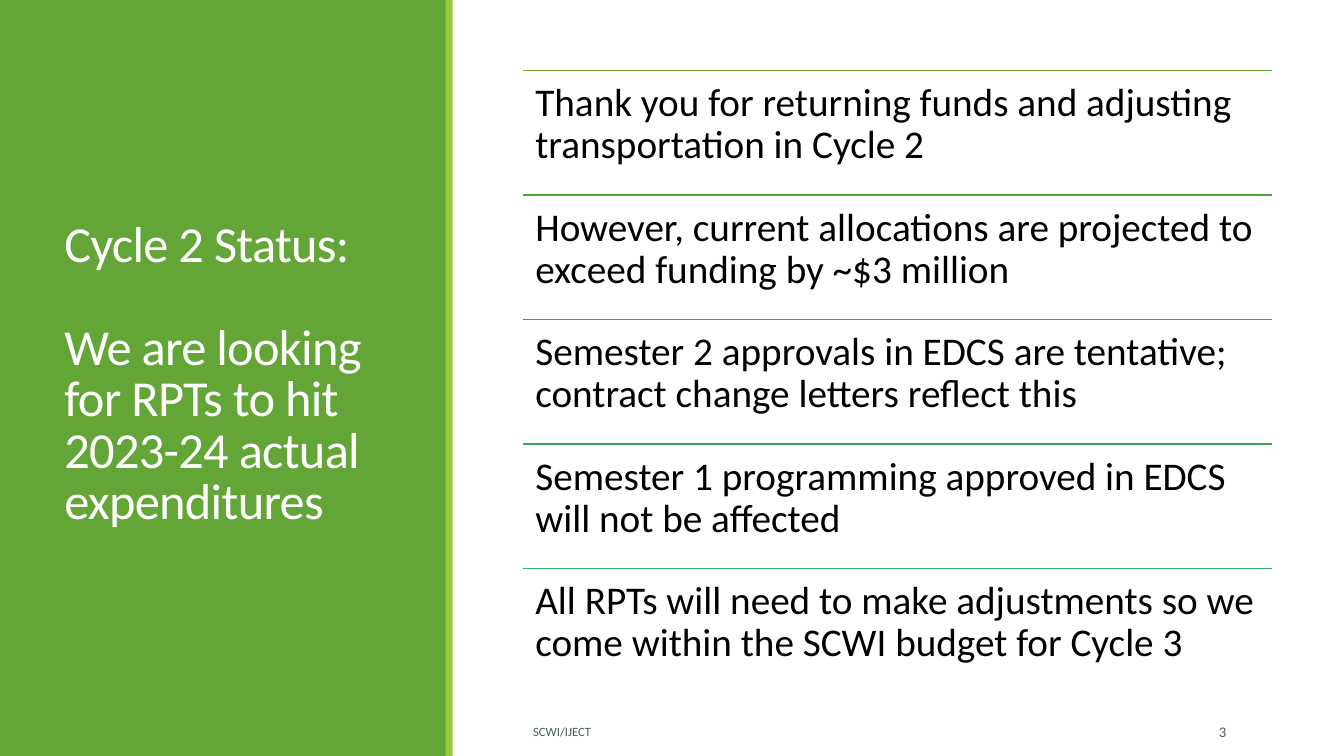
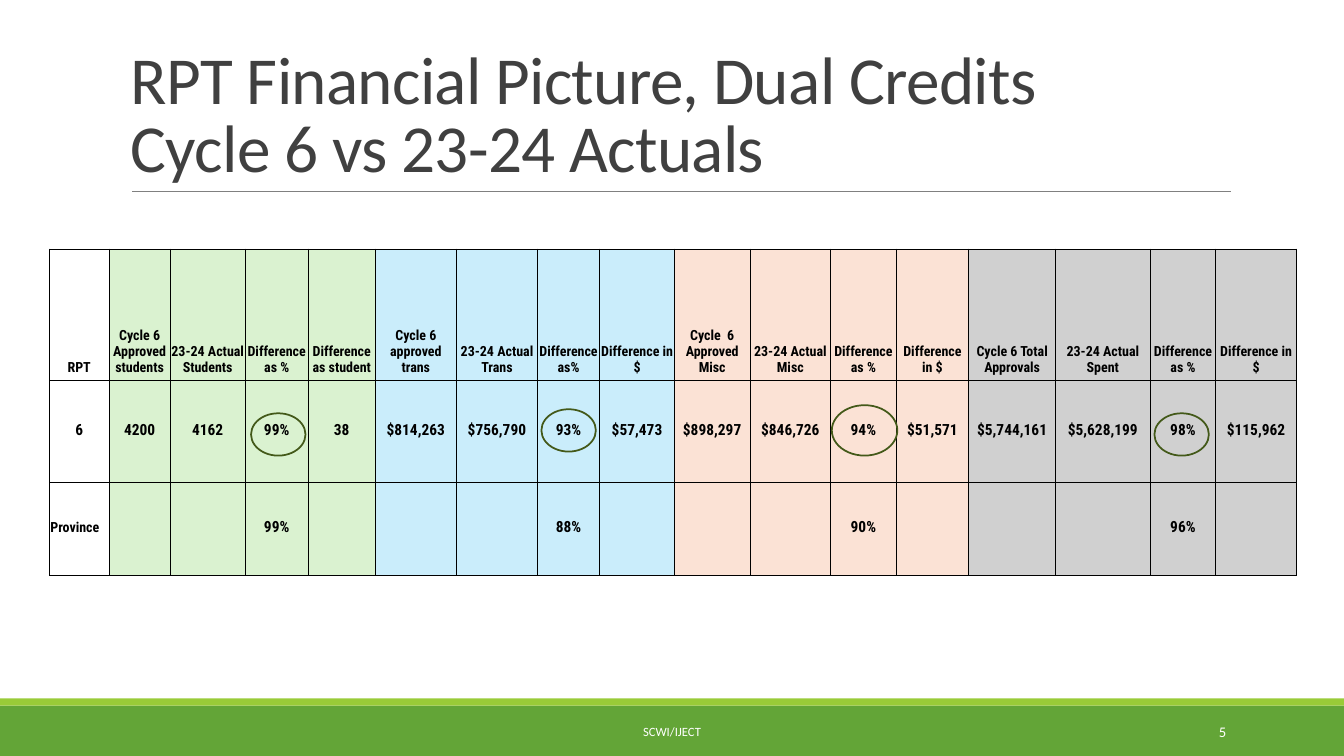
"""Build two slides on the SCWI dual credit funding status."""
from lxml import etree
from pptx import Presentation
from pptx.dml.color import RGBColor
from pptx.enum.shapes import MSO_CONNECTOR, MSO_SHAPE
from pptx.enum.text import MSO_ANCHOR, PP_ALIGN
from pptx.oxml.ns import qn
from pptx.util import Inches, Pt

LEFT, CENTER, RIGHT = PP_ALIGN.LEFT, PP_ALIGN.CENTER, PP_ALIGN.RIGHT
MIDDLE, BOTTOM = MSO_ANCHOR.MIDDLE, MSO_ANCHOR.BOTTOM
TOP = MSO_ANCHOR.TOP
STRAIGHT = MSO_CONNECTOR.STRAIGHT
RECTANGLE, OVAL = MSO_SHAPE.RECTANGLE, MSO_SHAPE.OVAL

COLOURS = {
    "green": "63A537", "lime": "99CB38", "white": "FFFFFF", "black": "000000",
    "slate": "455F51", "charcoal": "404040", "grey": "808080", "olive": "435919",
    "students": "DAF2D0", "transport": "CAEDFB", "misc": "FBE2D5", "total": "D0D0D0",
    "rule 1": "63A537", "rule 2": "4AA537", "rule 3": "37A63D",
    "rule 4": "37A656", "rule 5": "37A76F",
}
PALETTE = {name: RGBColor.from_string(value) for name, value in COLOURS.items()}


def add_text(slide, box, lines, size, colour, align=LEFT, anchor=MIDDLE, spacing=1.0, inset=0.1):
    frame = slide.shapes.add_textbox(*map(Inches, box)).text_frame
    frame.word_wrap = True
    frame.vertical_anchor = anchor
    frame.margin_left = frame.margin_right = Inches(inset)
    frame.margin_top = frame.margin_bottom = Inches(inset if inset > 0.1 else 0.05)
    for index, line in enumerate(lines):
        paragraph = frame.add_paragraph() if index else frame.paragraphs[0]
        paragraph.text = line
        paragraph.alignment = align
        paragraph.line_spacing = spacing
        paragraph.font.name = "Calibri"
        paragraph.font.size = Pt(size)
        paragraph.font.color.rgb = PALETTE[colour]
    return frame


def add_rule(slide, left, right, top, colour, width):
    rule = slide.shapes.add_connector(
        STRAIGHT, Inches(left), Inches(top), Inches(right), Inches(top))
    rule.line.color.rgb = PALETTE[colour]
    rule.line.width = Pt(width)
    etree.SubElement(rule._element.spPr, qn("a:effectLst"))


prs = Presentation()
prs.slide_width, prs.slide_height = Inches(13.33), Inches(7.5)
status, finances = [prs.slides.add_slide(prs.slide_layouts[6]) for _ in range(2)]

bands = [
    (status, (0, 0, 4.43, 7.5), "green"),
    (status, (4.42, 0, 0.07, 7.5), "lime"),
    (finances, (0, 7, 13.33, 0.5), "green"),
    (finances, (0, 6.93, 13.33, 0.07), "lime"),
]
for slide, box, colour in bands:
    band = slide.shapes.add_shape(RECTANGLE, *map(Inches, box))
    band.shadow.inherit = False
    band.fill.solid()
    band.fill.fore_color.rgb = PALETTE[colour]
    band.line.fill.background()

titles = [
    (status, (0.54, 0.57, 3.37, 6.31), 36, "white", MIDDLE, 37,
     ["Cycle 2 Status:", "We are looking for RPTs to hit 2023-24 actual expenditures"]),
    (finances, (1.2, 0.31, 11, 1.59), 48, "charcoal", BOTTOM, 0,
     ["RPT Financial Picture, Dual Credits", "Cycle 6 vs 23-24 Actuals"]),
]
for slide, box, size, colour, anchor, gap, lines in titles:
    title = add_text(slide, box, lines, size, colour, anchor=anchor, spacing=0.85)
    title.paragraphs[1].space_before = Pt(gap)
    for paragraph in title.paragraphs:
        paragraph._p.pPr.find(qn("a:defRPr")).set("spc", "-50")

footers = [
    (status, 5.19, 5.58, LEFT, 11.07, 1.19, "3", "slate"),
    (finances, 4.03, 5.27, CENTER, 10.83, 1.43, "5", "white"),
]
for slide, left, width, align, number_left, number_width, number, colour in footers:
    add_text(slide, (left, 7.06, width, 0.4), ["SCWI/IJECT"], 9, colour, align)
    add_text(slide, (number_left, 7.06, number_width, 0.4), [number], 10.5, colour, RIGHT)

messages = [
    "Thank you for returning funds and adjusting transportation in Cycle 2",
    "However, current allocations are projected to exceed funding by ~$3 million",
    "Semester 2 approvals in EDCS are tentative; contract change letters reflect this",
    "Semester 1 programming approved in EDCS will not be affected",
    "All RPTs will need to make adjustments so we come within the SCWI budget for Cycle 3",
]
message_left, message_width, message_height = 5.19, 7.43, 1.235
for index, message in enumerate(messages):
    top = 0.7 + index * message_height
    add_rule(status, message_left, message_left + message_width, top, f"rule {index + 1}", 1.25)
    add_text(status, (message_left, top, message_width, message_height), [message], 28,
             "black", anchor=TOP, spacing=0.9, inset=0.12)

add_rule(finances, 1.31, 12.21, 1.9, "grey", 0.5)

headings = [
    "RPT",
    "Cycle 6 Approved students", "23-24 Actual Students", "Difference as %",
    "Difference as student",
    "Cycle 6 approved trans", "23-24 Actual Trans", "Difference as%", "Difference in $",
    "Cycle  6 Approved Misc", "23-24 Actual Misc", "Difference as %", "Difference in $",
    "Cycle 6 Total Approvals", "23-24 Actual Spent", "Difference as %", "Difference in $",
]
region = [
    "6", "4200", "4162", "99%", "38", "$814,263", "$756,790", "93%", "$57,473",
    "$898,297", "$846,726", "94%", "$51,571", "$5,744,161", "$5,628,199", "98%", "$115,962",
]
province = ["Province"]
for share in ("99%", "88%", "90%", "96%"):
    province += ["", "", share, ""]
column_groups = [None]
for group in ("students", "transport", "misc", "total"):
    column_groups += [group] * 4
column_widths = [0.59, 0.61, 0.74, 0.63, 0.66, 0.81, 0.8, 0.62, 0.74,
                 0.75, 0.8, 0.65, 0.72, 0.86, 0.94, 0.65, 0.8]
row_heights = [1.3, 1.02, 0.92]

comparison = finances.shapes.add_table(
    3, 17, Inches(0.49), Inches(2.47), Inches(12.34), Inches(3.25)).table
comparison.first_row = comparison.horz_banding = False
for column, width in zip(comparison.columns, column_widths):
    column.width = Inches(width)
for row, height in zip(comparison.rows, row_heights):
    row.height = Inches(height)

for r, values in enumerate([headings, region, province]):
    for c, value in enumerate(values):
        cell = comparison.cell(r, c)
        cell.margin_left = cell.margin_right = cell.margin_top = Inches(0.01)
        cell.margin_bottom = Inches(0.04)
        cell.vertical_anchor = MIDDLE if r else BOTTOM
        for side in ("a:lnL", "a:lnR", "a:lnT", "a:lnB"):
            border = etree.SubElement(cell._tc.tcPr, qn(side), w=str(Pt(0.5)))
            ink = etree.SubElement(border, qn("a:solidFill"))
            etree.SubElement(ink, qn("a:srgbClr"), val=COLOURS["black"])
        if column_groups[c]:
            cell.fill.solid()
            cell.fill.fore_color.rgb = PALETTE[column_groups[c]]
        else:
            cell.fill.background()
        paragraph = cell.text_frame.paragraphs[0]
        paragraph.text = value
        paragraph.alignment = LEFT if value == "Province" else CENTER
        paragraph.font.name = "Roboto Condensed"
        paragraph.font.size = Pt(10 if r == 0 or value == "Province" else 11)
        paragraph.font.bold = True
        paragraph.font.color.rgb = PALETTE["black"]

highlights = [
    (2.49, 4.1, 0.54, 0.42), (5.37, 4.06, 0.54, 0.42),
    (8.25, 4.02, 0.65, 0.5), (11.45, 4.1, 0.54, 0.42),
]
for box in highlights:
    highlight = finances.shapes.add_shape(OVAL, *map(Inches, box))
    highlight.shadow.inherit = False
    highlight.fill.background()
    highlight.line.color.rgb = PALETTE["olive"]
    highlight.line.width = Pt(1.25)

prs.save("out.pptx")
